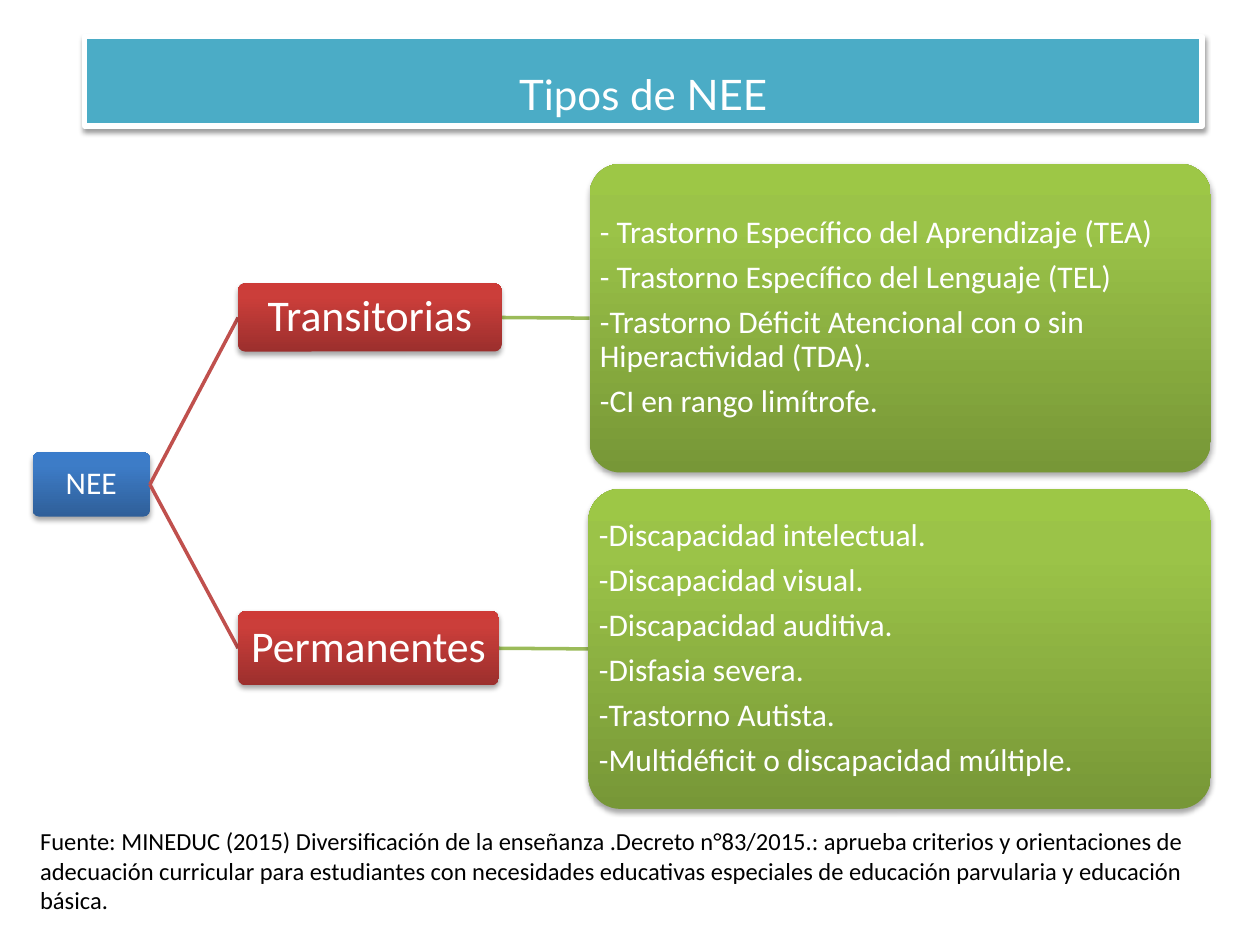
from lxml.etree import SubElement
from pptx import Presentation
from pptx.dml.color import RGBColor
from pptx.enum.shapes import MSO_CONNECTOR, MSO_SHAPE
from pptx.enum.text import MSO_ANCHOR, PP_ALIGN
from pptx.oxml.ns import qn
from pptx.util import Inches, Pt

WHITE = RGBColor(0xFF, 0xFF, 0xFF)
BLACK = RGBColor(0x00, 0x00, 0x00)
TEAL = RGBColor(0x4B, 0xAC, 0xC6)
RED = RGBColor(0xC0, 0x50, 0x4D)
GREEN = RGBColor(0x9B, 0xBB, 0x59)

# Gradient colours from the bottom edge to the top edge
BLUE_SHADES = [RGBColor(0x2F, 0x5F, 0x99), RGBColor(0x3D, 0x7C, 0xC7), RGBColor(0x3A, 0x7C, 0xCB)]
RED_SHADES = [RGBColor(0x9C, 0x2F, 0x2D), RGBColor(0xCB, 0x3E, 0x3A), RGBColor(0xCE, 0x3B, 0x37)]
GREEN_SHADES = [RGBColor(0x77, 0x97, 0x37), RGBColor(0x9B, 0xC3, 0x48), RGBColor(0x9D, 0xC7, 0x46)]
STOPS = [0, 80, 100]


def add_drop_shadow(shape, opacity):
    shape.shadow.inherit = False
    effects = shape._element.spPr.find(qn("a:effectLst"))
    shadow = SubElement(effects, qn("a:outerShdw"), blurRad=str(Pt(3.1)),
                        dist=str(Pt(1.8)), dir="5400000", rotWithShape="0")
    color = SubElement(shadow, qn("a:srgbClr"), val="000000")
    SubElement(color, qn("a:alpha"), val=str(opacity * 1000))


def add_node(box, shades, lines, size, inset, align):
    """Add a rounded gradient box holding one paragraph per line."""
    node = slide.shapes.add_shape(MSO_SHAPE.ROUNDED_RECTANGLE, *map(Inches, box))
    node.adjustments[0] = 0.1
    node.line.fill.background()
    node.fill.gradient()
    node.fill.gradient_angle = 90
    stops = node._element.spPr.find(qn("a:gradFill")).find(qn("a:gsLst"))
    for stop in list(stops):
        stops.remove(stop)
    for position, shade in zip(STOPS, shades):
        stop = SubElement(stops, qn("a:gs"), pos=str(position * 1000))
        SubElement(stop, qn("a:srgbClr"), val=str(shade))
    add_drop_shadow(node, 35)

    frame = node.text_frame
    frame.word_wrap = True
    frame.vertical_anchor = MSO_ANCHOR.MIDDLE
    frame.margin_left = frame.margin_right = Inches(inset)
    frame.margin_top = frame.margin_bottom = Inches(inset)
    frame.text = "\n".join(lines)
    for paragraph in frame.paragraphs:
        paragraph.alignment = align
        paragraph.line_spacing = 0.9
        paragraph.font.size = Pt(size)
        paragraph.font.name = "Calibri"
        paragraph.font.color.rgb = WHITE
    for paragraph in frame.paragraphs[:-1]:
        paragraph.space_after = Pt(0.35 * size)


prs = Presentation()
prs.slide_width = Inches(10)
prs.slide_height = Inches(7.5)
slide = prs.slides.add_slide(prs.slide_layouts[5])

# Title band
title = slide.shapes.title
title.left, title.top = Inches(0.67), Inches(0.29)
title.width, title.height = Inches(8.87), Inches(0.71)
title.fill.solid()
title.fill.fore_color.rgb = TEAL
title.line.color.rgb = WHITE
title.line.width = Pt(3)
add_drop_shadow(title, 38)
title.text_frame.text = "Tipos de NEE"
title.text_frame.vertical_anchor = MSO_ANCHOR.TOP
heading = title.text_frame.paragraphs[0]
heading.alignment = PP_ALIGN.CENTER
heading.line_spacing = 1.5
heading.font.size = Pt(24)
heading.font.name = "Lato"
heading.font.color.rgb = WHITE

# Tree: root, two types, and the conditions in each type
root_box = (0.26, 3.59, 0.93, 0.51)
branches = [
    ("Transitorias", (1.89, 2.25, 2.09, 0.54), (4.68, 1.3, 4.93, 2.45), [
        "- Trastorno Específico del Aprendizaje (TEA)",
        "- Trastorno Específico del Lenguaje (TEL)",
        "-Trastorno Déficit Atencional con o sin Hiperactividad (TDA).",
        "-CI en rango limítrofe.",
    ]),
    ("Permanentes", (1.89, 4.85, 2.07, 0.59), (4.67, 3.88, 4.94, 2.54), [
        "-Discapacidad intelectual.",
        "-Discapacidad visual.",
        "-Discapacidad auditiva.",
        "-Disfasia severa.",
        "-Trastorno Autista.",
        "-Multidéficit o discapacidad múltiple.",
    ]),
]

add_node(root_box, BLUE_SHADES, ["NEE"], 18, 0.01, PP_ALIGN.CENTER)
for type_name, type_box, conditions_box, conditions in branches:
    for parent, child, color in [(root_box, type_box, RED), (type_box, conditions_box, GREEN)]:
        branch = slide.shapes.add_connector(
            MSO_CONNECTOR.STRAIGHT,
            Inches(parent[0] + parent[2]), Inches(parent[1] + parent[3] / 2),
            Inches(child[0]), Inches(child[1] + child[3] / 2))
        branch.line.color.rgb = color
        branch.line.width = Pt(2)
        SubElement(branch._element.spPr, qn("a:effectLst"))
    add_node(type_box, RED_SHADES, [type_name], 25, 0.02, PP_ALIGN.CENTER)
    add_node(conditions_box, GREEN_SHADES, conditions, 18, 0.01, PP_ALIGN.LEFT)

# Source note
source = slide.shapes.add_textbox(Inches(0.22), Inches(6.51), Inches(9.37), Inches(0.81))
source.text_frame.word_wrap = True
source.text_frame.text = (
    "Fuente: MINEDUC (2015) Diversificación de la enseñanza .Decreto n°83/2015.: "
    "aprueba criterios y orientaciones de adecuación curricular para estudiantes con "
    "necesidades educativas especiales de educación parvularia y educación básica.")
citation = source.text_frame.paragraphs[0]
citation.font.size = Pt(14)
citation.font.name = "Calibri"
citation.font.color.rgb = BLACK

prs.save("out.pptx")
